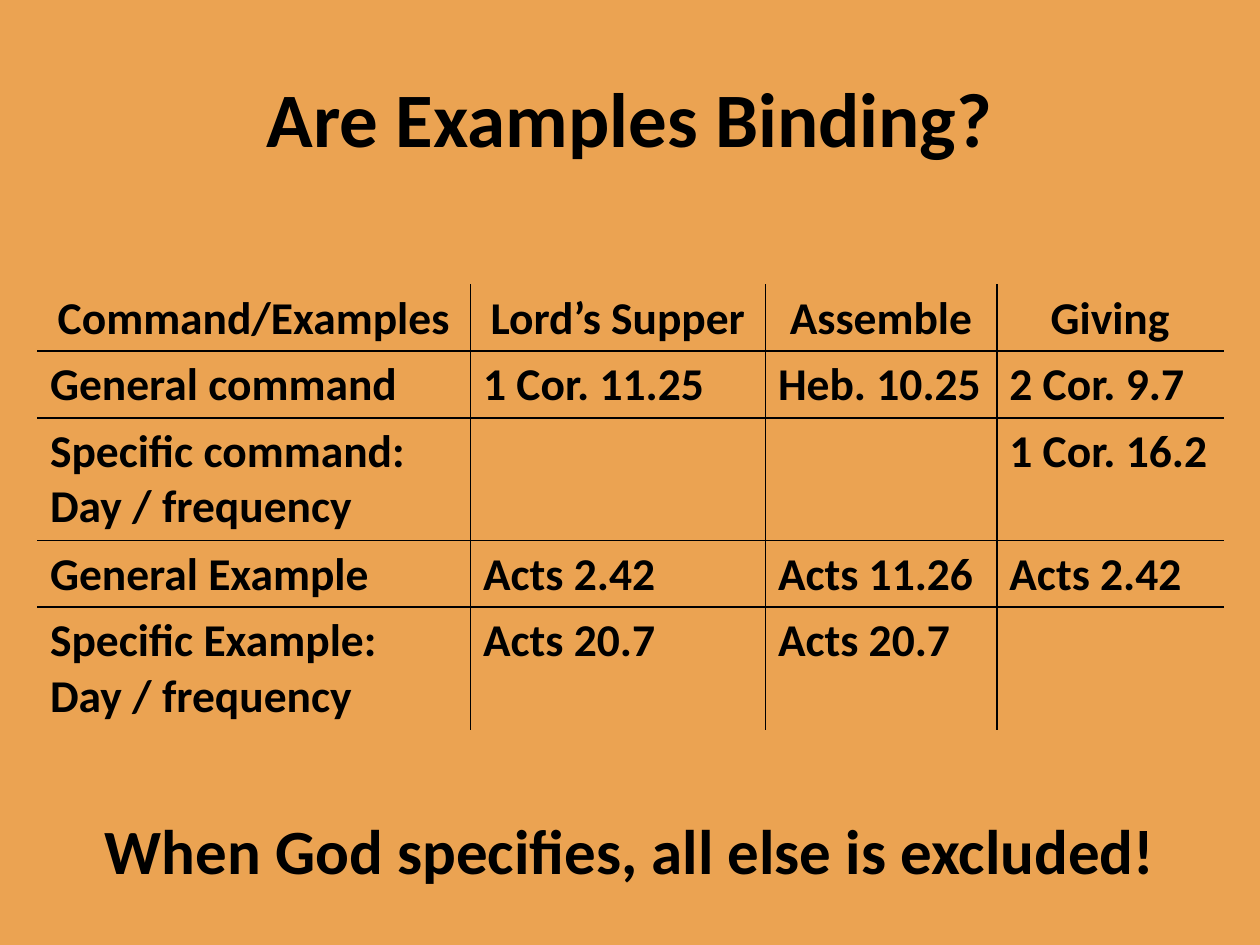
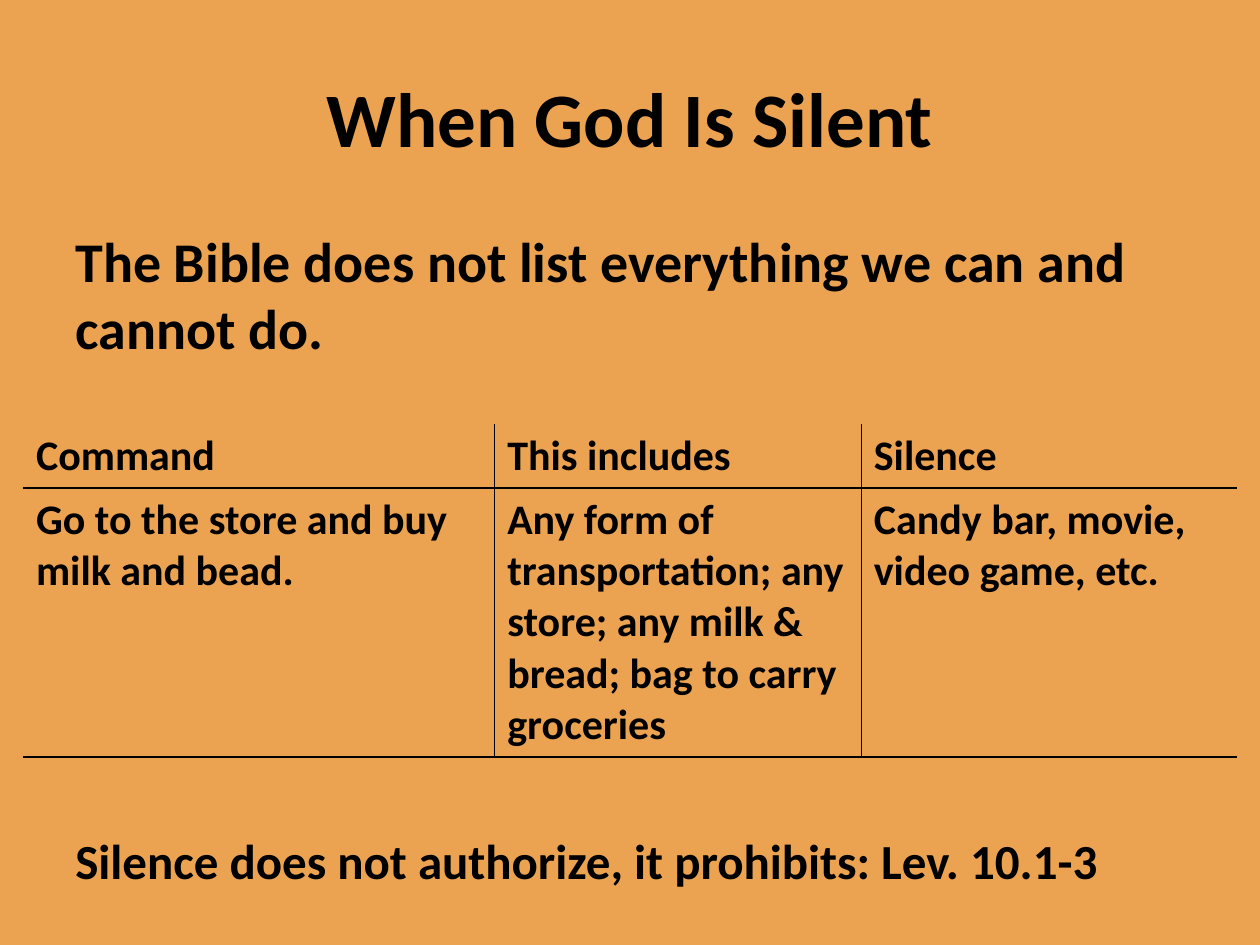
from dataclasses import dataclass

from lxml import etree
from pptx import Presentation
from pptx.dml.color import RGBColor as Color
from pptx.enum.shapes import MSO_SHAPE as Preset
from pptx.enum.text import MSO_ANCHOR as Anchor, PP_ALIGN as Align
from pptx.oxml.ns import qn
from pptx.util import Pt


@dataclass(frozen=True)
class Theme:
    background: str = "EBA352"
    ink: str = "000000"
    font: str = "Calibri"
    title: int = 44
    conclusion: int = 36
    statement: int = 32
    closing: int = 28
    example_cell: int = 26
    silence_cell: int = 24
    rule: int = 1


THEME = Theme()
SLIDE_SIZE = (720, 540)
TITLE_BOX = (36, 21.6, 648, 90)
CONCLUSION_BOX = (0, 460, 720, 51)
BODY_BOX = (36, 126, 648, 414)
SIDES = {"left": "a:lnL", "right": "a:lnR", "top": "a:lnT", "bottom": "a:lnB"}

EXAMPLE_COLUMNS = (247.5, 168.5, 132.25, 129.6)
LINE_HEIGHT, TWO_LINE_HEIGHT = 38, 70.3
EXAMPLE_ROWS = [
    ("Command/Examples", "Lord’s Supper", "Assemble", "Giving"),
    ("General command", "1 Cor. 11.25", "Heb. 10.25", "2 Cor. 9.7"),
    ("Specific command:\nDay / frequency", "", "", "1 Cor. 16.2"),
    ("General Example", "Acts 2.42", "Acts 11.26", "Acts 2.42"),
    ("Specific Example:\nDay / frequency", "Acts 20.7", "Acts 20.7", ""),
]

SILENCE_COLUMNS = (269.3, 209.5, 214.6)
SILENCE_HEIGHTS = (36.6, 153.6)
SILENCE_ROWS = [
    ("Command", "This includes", "Silence"),
    ("Go to the store and buy milk and bead.",
     "Any form of transportation; any store; any milk & bread; bag to carry groceries",
     "Candy bar, movie, video game, etc."),
]


def style_paragraph(paragraph, size, align=Align.LEFT):
    paragraph.alignment = align
    font_format = {"name": THEME.font, "size": Pt(size), "bold": True}
    for name, value in font_format.items():
        setattr(paragraph.font, name, value)
        for run in paragraph.runs:
            setattr(run.font, name, value)
    for run in paragraph.runs:
        run.font.color.rgb = Color.from_string(THEME.ink)


def add_text(slide, box, text, size, align=Align.LEFT, anchor=Anchor.TOP):
    frame = slide.shapes.add_textbox(*map(Pt, box)).text_frame
    frame.word_wrap = True
    frame.vertical_anchor = anchor
    frame.text = text
    style_paragraph(frame.paragraphs[0], size, align)
    return frame


def set_borders(cell, visible_sides):
    """Rule the visible sides of a cell and clear the others."""
    cell.fill.background()
    properties = cell._tc.get_or_add_tcPr()
    for index, (side, tag) in enumerate(SIDES.items()):
        line = etree.Element(qn(tag), w=str(Pt(THEME.rule)))
        if side in visible_sides:
            fill = etree.SubElement(line, qn("a:solidFill"))
            etree.SubElement(fill, qn("a:srgbClr"), val=THEME.ink)
        else:
            etree.SubElement(line, qn("a:noFill"))
        properties.insert(index, line)


def add_ruled_table(slide, origin, columns, heights, rows, size,
                    align=Align.LEFT, top_rule=False, bottom_rule=True):
    """Add a table with inner rules and open left and right edges."""
    box = (*origin, sum(columns), sum(heights))
    table = slide.shapes.add_table(len(rows), len(columns), *map(Pt, box)).table
    table.first_row = table.horz_banding = False
    for column, width in zip(table.columns, columns):
        column.width = Pt(width)
    for row, height in zip(table.rows, heights):
        row.height = Pt(height)
    for row_index, texts in enumerate(rows):
        for column_index, text in enumerate(texts):
            cell = table.cell(row_index, column_index)
            cell.text = text
            for paragraph in cell.text_frame.paragraphs:
                style_paragraph(paragraph, size, align)
            visible = {"left": column_index > 0,
                       "right": column_index < len(columns) - 1,
                       "top": row_index > 0 or top_rule,
                       "bottom": row_index < len(rows) - 1 or bottom_rule}
            set_borders(cell, [side for side, shown in visible.items() if shown])


def add_titled_slide(presentation, title):
    slide = presentation.slides.add_slide(presentation.slide_layouts[6])
    # Full-slide colour panel
    panel = slide.shapes.add_shape(Preset.RECTANGLE, 0, 0, *map(Pt, SLIDE_SIZE))
    panel.shadow.inherit = False
    panel.fill.solid()
    panel.fill.fore_color.rgb = Color.from_string(THEME.background)
    panel.line.fill.background()
    # Title
    add_text(slide, TITLE_BOX, title, THEME.title, Align.CENTER, Anchor.MIDDLE)
    return slide


def add_example_rows(slide, left, top):
    """Stack one table per row, each below the one before."""
    last = len(EXAMPLE_ROWS) - 1
    for index, row in enumerate(EXAMPLE_ROWS):
        height = TWO_LINE_HEIGHT if "\n" in row[0] else LINE_HEIGHT
        add_ruled_table(slide, (left, top), EXAMPLE_COLUMNS, [height], [row],
                        THEME.example_cell,
                        align=Align.LEFT if index else Align.CENTER,
                        top_rule=index > 0, bottom_rule=index < last)
        top += height


def build_examples_slide(presentation):
    slide = add_titled_slide(presentation, "Are Examples Binding?")
    add_example_rows(slide, 21.4, 162.5)
    # Conclusion
    add_text(slide, CONCLUSION_BOX, "When God specifies, all else is excluded!",
             THEME.conclusion, Align.CENTER)


def build_silence_slide(presentation):
    slide = add_titled_slide(presentation, "When God Is Silent")
    # Statement above the table and closing line below it
    body = add_text(slide, BODY_BOX,
                    "The Bible does not list everything we can and cannot do.",
                    THEME.statement)
    closing = body.add_paragraph()
    closing.text = "Silence does not authorize, it prohibits: Lev. 10.1-3"
    closing.space_before = Pt(268)
    style_paragraph(closing, THEME.closing)
    # Command table
    add_ruled_table(slide, (13.4, 242.4), SILENCE_COLUMNS, SILENCE_HEIGHTS,
                    SILENCE_ROWS, THEME.silence_cell)


def main():
    presentation = Presentation()
    presentation.slide_width, presentation.slide_height = map(Pt, SLIDE_SIZE)
    build_examples_slide(presentation)
    build_silence_slide(presentation)
    presentation.save("out.pptx")


if __name__ == "__main__":
    main()
